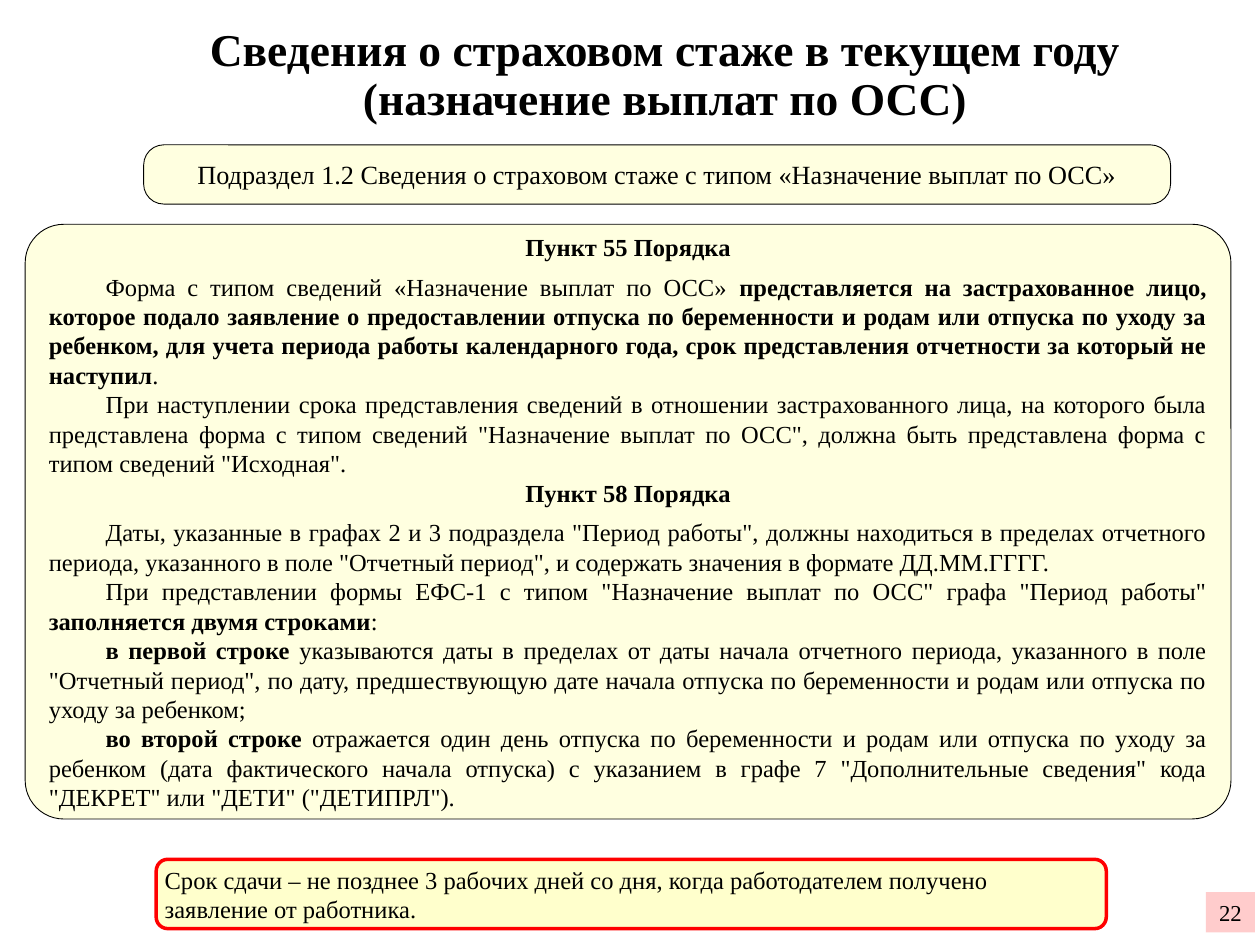
from pptx import Presentation, util as u
from pptx.dml.color import RGBColor
from pptx.enum import shapes, text
from lxml import etree

FONT = "Times New Roman"
BLACK, CREAM, PINK, RED = "000000", "FFFFCC", "FFCCCC", "FF0000"
ALIGN = text.PP_ALIGN

HEADING = {"align": ALIGN.CENTER, "after": 6}
BODY = {"align": ALIGN.JUSTIFY, "indent": 0.45}

# Each paragraph: its style, then runs of (wording, bold)
RULES = [
    (HEADING, [("Пункт 55 Порядка", True)]),
    (BODY, [
        ("Форма с типом сведений «Назначение выплат по ОСС» ", False),
        ("представляется на застрахованное лицо, которое подало заявление о предоставлении "
         "отпуска по беременности и родам или отпуска по уходу за ребенком, для учета периода "
         "работы календарного года, срок представления отчетности за который не наступил", True),
        (".", False)]),
    (BODY, [
        ("При наступлении срока представления сведений в отношении застрахованного лица, "
         "на которого была представлена форма с типом сведений \"Назначение выплат по ОСС\", "
         "должна быть представлена форма с типом сведений \"Исходная\".", False)]),
    (HEADING, [("Пункт 58 Порядка", True)]),
    (BODY, [
        ("Даты, указанные в графах 2 и 3 подраздела \"Период работы\", должны находиться "
         "в пределах отчетного периода, указанного в поле \"Отчетный период\", и содержать "
         "значения в формате ДД.ММ.ГГГГ.", False)]),
    (BODY, [
        ("При представлении формы ЕФС-1 с типом \"Назначение выплат по ОСС\" "
         "графа \"Период работы\" ", False),
        ("заполняется двумя строками", True),
        (":", False)]),
    (BODY, [
        ("в первой строке ", True),
        ("указываются даты в пределах от даты начала отчетного периода, указанного в поле "
         "\"Отчетный период\", по дату, предшествующую дате начала отпуска по беременности "
         "и родам или отпуска по уходу за ребенком;", False)]),
    (BODY, [
        ("во второй строке ", True),
        ("отражается один день отпуска по беременности и родам или отпуска по уходу за "
         "ребенком (дата фактического начала отпуска) с указанием в графе 7 \"Дополнительные "
         "сведения\" кода \"ДЕКРЕТ\" или \"ДЕТИ\" (\"ДЕТИПРЛ\").", False)]),
]


def color(hex_value):
    return RGBColor.from_string(hex_value)


def inches(box):
    return [u.Inches(length) for length in box]


def set_opacity(shape, percent):
    fill_color = shape.fill._xPr.solidFill[0]
    namespace = etree.QName(fill_color).namespace
    alpha = etree.SubElement(fill_color, f"{{{namespace}}}alpha")
    alpha.set("val", str(percent * 1000))


def add_panel(slide, kind, box, fill, line=None, width=0.5, corner=None, opacity=None):
    panel = slide.shapes.add_shape(kind, *inches(box))
    panel.shadow.inherit = False
    panel.fill.solid()
    panel.fill.fore_color.rgb = color(fill)
    if opacity is not None:
        set_opacity(panel, opacity)
    if line:
        panel.line.color.rgb = color(line)
        panel.line.width = u.Pt(width)
    else:
        panel.line.fill.background()
    if corner is not None:
        panel.adjustments[0] = corner
    return panel


def style_paragraph(paragraph, align, after=0, indent=0):
    paragraph.alignment = align
    paragraph.space_after = u.Pt(after)
    if indent:
        properties = paragraph._p.get_or_add_pPr()
        properties.set("marL", "0")
        properties.set("indent", str(u.Inches(indent)))


def add_run(paragraph, wording, size, bold=False):
    run = paragraph.add_run()
    run.text = wording
    run.font.name = FONT
    run.font.size = u.Pt(size)
    run.font.bold = bold
    run.font.color.rgb = color(BLACK)


def write(shape, paragraphs, size):
    frame = shape.text_frame
    frame.word_wrap = True
    frame.vertical_anchor = text.MSO_ANCHOR.MIDDLE
    for number, (style, runs) in enumerate(paragraphs):
        paragraph = frame.add_paragraph() if number else frame.paragraphs[0]
        style_paragraph(paragraph, **style)
        for wording, bold in runs:
            add_run(paragraph, wording, size, bold)


def add_title(slide, box):
    frame = slide.shapes.add_textbox(*inches(box)).text_frame
    frame.word_wrap = True
    frame.vertical_anchor = text.MSO_ANCHOR.MIDDLE
    heading = frame.paragraphs[0]
    heading.alignment = ALIGN.CENTER
    heading.line_spacing = 0.9
    add_run(heading, "Сведения о страховом стаже в текущем году", 26, True)
    heading.add_line_break()
    add_run(heading, "(назначение выплат по ОСС)", 26, True)


def add_subsection(slide, box):
    banner = add_panel(slide, shapes.MSO_SHAPE.ROUNDED_RECTANGLE, box, CREAM, BLACK,
                       corner=0.34, opacity=60)
    wording = "Подраздел 1.2 Сведения о страховом стаже с типом «Назначение выплат по ОСС»"
    write(banner, [({"align": ALIGN.CENTER}, [(wording, False)])], 15)


def add_page_number(slide, box):
    badge = add_panel(slide, shapes.MSO_SHAPE.RECTANGLE, box, PINK)
    write(badge, [({"align": ALIGN.CENTER}, [("22", False)])], 13)


def add_rules(slide, box):
    rules = add_panel(slide, shapes.MSO_SHAPE.ROUNDED_RECTANGLE, box, CREAM, BLACK,
                      corner=0.065, opacity=60)
    write(rules, RULES, 14)


def add_deadline(slide, box):
    deadline = add_panel(slide, shapes.MSO_SHAPE.FLOWCHART_ALTERNATE_PROCESS, box,
                         CREAM, RED, width=2)
    frame = deadline.text_frame
    frame.margin_left = frame.margin_right = u.Inches(0.04)
    frame.margin_top = frame.margin_bottom = 0
    wording = ("Срок сдачи – не позднее 3 рабочих дней со дня, когда работодателем "
               "получено заявление от работника.")
    write(deadline, [({"align": ALIGN.LEFT}, [(wording, False)])], 14)


def main():
    deck = Presentation()
    deck.slide_width, deck.slide_height = u.Inches(10), u.Inches(7.5)
    slide = deck.slides.add_slide(deck.slide_layouts[6])
    add_title(slide, (1.06, 0.21, 8.44, 0.79))
    add_subsection(slide, (1.14, 1.15, 8.15, 0.47))
    add_page_number(slide, (9.57, 7.08, 0.39, 0.32))
    add_rules(slide, (0.2, 1.78, 9.57, 4.72))
    add_deadline(slide, (1.24, 6.82, 7.54, 0.55))
    deck.save("out.pptx")


if __name__ == "__main__":
    main()
